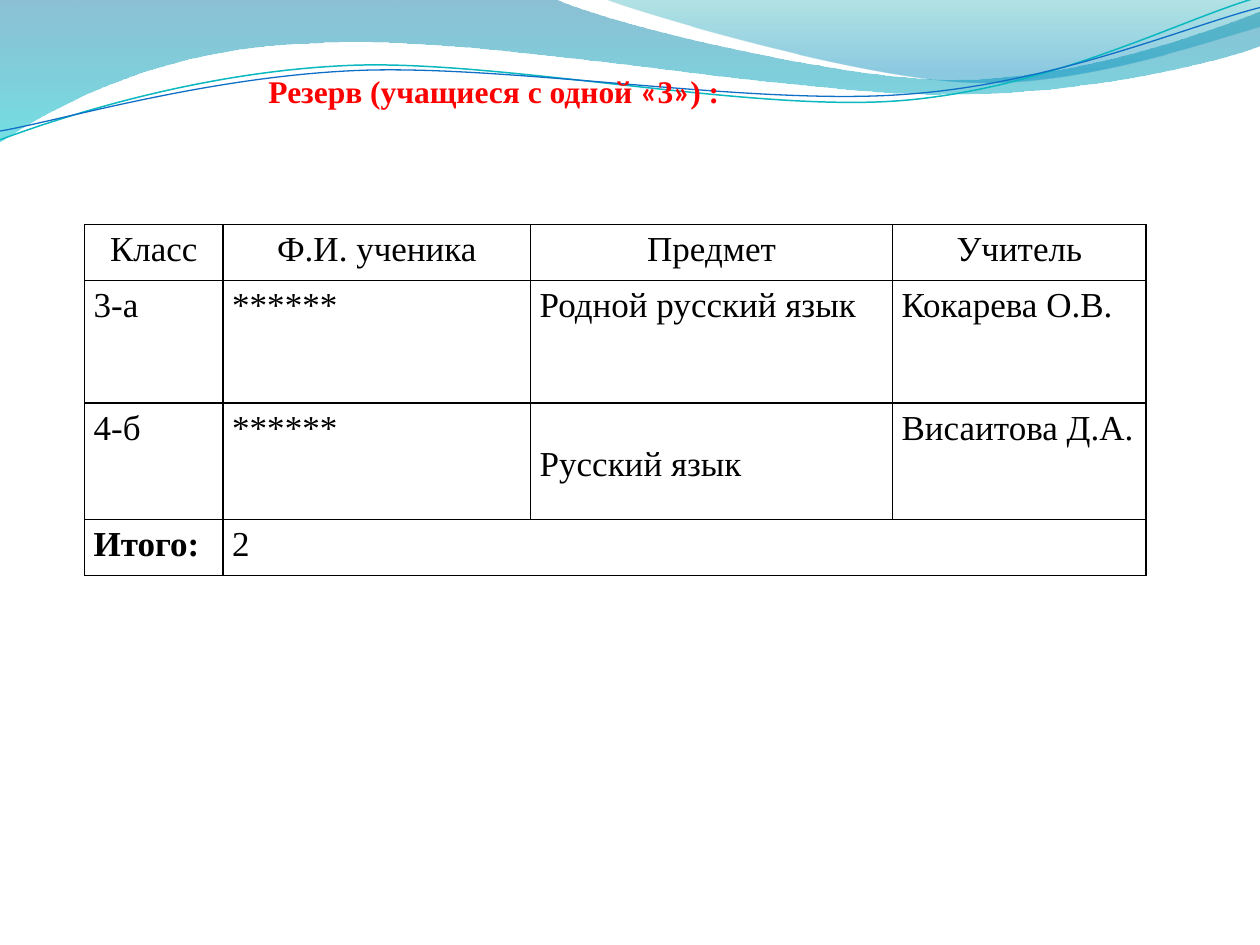
import math
from dataclasses import dataclass

from lxml import etree
from pptx import Presentation
from pptx.dml.color import RGBColor
from pptx.enum.text import MSO_ANCHOR, PP_ALIGN
from pptx.oxml.ns import qn
from pptx.util import Pt

CENTER, LEFT = PP_ALIGN.CENTER, PP_ALIGN.LEFT
MIDDLE, TOP = MSO_ANCHOR.MIDDLE, MSO_ANCHOR.TOP

Point = tuple[float, float]


@dataclass(frozen=True)
class Theme:
    title_color: str = "FF0000"
    text_color: str = "000000"
    border_color: str = "000000"
    title_size: float = 18
    table_size: float = 20
    border_width: float = 1
    font: str = "Times New Roman"
    quote_font: str = "Calibri"


@dataclass(frozen=True)
class Stop:
    position: float
    color: str
    opacity: int


@dataclass(frozen=True)
class Wave:
    """Box (left, top, width, height), start point, then segments of
    one point for a line or three for a Bézier curve."""
    box: tuple[float, float, float, float]
    start: Point
    segments: list[tuple[Point, ...]]
    stops: tuple[Stop, ...] = ()
    line_color: str = ""
    line_width: float = 0
    rotation: float = 0


THEME = Theme()

WAVES = [
    Wave((-0.7, -0.7, 721.4, 82.1), (0, 0), [
        ((316.8, -0.7),),
        ((342.7, 12.2), (478.1, 45.4), (545.8, 45.4)),
        ((614.2, 45.4), (689.8, 18.7), (720, 6.5)),
        ((720.7, 25.9),),
        ((707.8, 31.7), (626.4, 54.7), (537.1, 54)),
        ((447.8, 54), (275, 20.2), (185, 24.5)),
        ((92.9, 25.9), (33.1, 59.8), (-0.7, 81.4)),
        ((0, 0),),
    ], stops=(Stop(0, "0074A1", 45), Stop(1, "00C6CF", 55))),
    Wave((344.9, -0.7, 375.1, 50.4), (344.9, -0.7), [
        ((366.5, 7.9), (491, 44.6), (553.7, 46.8)),
        ((616.3, 49.7), (691.9, 23), (720, 15.1)),
        ((720, 0),),
        ((344.9, -0.7),),
    ], stops=(Stop(0, "00A1A9", 30), Stop(0.8, "008BBF", 45))),
    Wave((-1.4, 15.8, 721.4, 51.1), (0, 79.9), [
        ((34.6, 67), (113.8, 41), (199.4, 37.4)),
        ((284.4, 33.8), (427, 64.1), (513.4, 57.6)),
        ((599.8, 51.1), (675.4, 10.8), (718.6, -1.4)),
    ], line_color="0AB8BF", line_width=0.85, rotation=357.3),
    Wave((-1.4, 21.6, 722.2, 41.8), (0, 74.9), [
        ((33.8, 69.1), (118.1, 43.9), (203.8, 40.3)),
        ((290.2, 36.7), (429.8, 60.5), (516.2, 54)),
        ((601.9, 48.2), (677.5, 15.1), (720, 4.3)),
    ], line_color="0F6FC6", line_width=0.75, rotation=357.3),
]

TITLE_RUNS = [
    ("Резерв (учащиеся с одной ", THEME.font),
    ("«", THEME.quote_font),
    ("3", THEME.font),
    ("»", THEME.quote_font),
    (") : ", THEME.font),
]

COLUMN_WIDTHS = [79.2, 175.7, 206.8, 145]
ROW_HEIGHTS = [32, 70, 66.6, 32]
ROWS = [
    ["Класс", "Ф.И. ученика", "Предмет", "Учитель"],
    ["3-а", "******", "Родной русский язык", "Кокарева О.В."],
    ["4-б", "******", "Русский язык", "Висаитова Д.А."],
    ["Итого:", "2", "", ""],
]
CENTERED_CELL = (2, 2)
TOTAL_LABEL_CELL = (3, 0)


def to_box(wave: Wave, point: Point) -> Point:
    """Undo the rotation about the box centre and measure from the box corner."""
    left, top, width, height = wave.box
    x, y = point[0] - left - width / 2, point[1] - top - height / 2
    angle = math.radians(-wave.rotation)
    return (x * math.cos(angle) - y * math.sin(angle) + width / 2,
            x * math.sin(angle) + y * math.cos(angle) + height / 2)


def write_outline(outline, wave: Wave) -> None:
    """Fill the freeform's outline with true Bézier segments."""
    outline.clear()
    outline.set("w", str(Pt(wave.box[2])))
    outline.set("h", str(Pt(wave.box[3])))
    for index, points in enumerate([(wave.start,), *wave.segments]):
        tag = "moveTo" if index == 0 else "lnTo" if len(points) == 1 else "cubicBezTo"
        command = etree.SubElement(outline, qn(f"a:{tag}"))
        for point in points:
            x, y = to_box(wave, point)
            etree.SubElement(command, qn("a:pt"), x=str(Pt(x)), y=str(Pt(y)))
    if wave.stops:
        etree.SubElement(outline, qn("a:close"))


def draw_wave(slide, wave: Wave) -> None:
    builder = slide.shapes.build_freeform(*map(Pt, wave.start))
    builder.add_line_segments([tuple(map(Pt, segment[-1])) for segment in wave.segments],
                              close=False)
    shape = builder.convert_to_shape()
    for name, value in zip(("left", "top", "width", "height"), wave.box):
        setattr(shape, name, Pt(value))
    shape.rotation = wave.rotation
    write_outline(next(shape.element.iter(qn("a:path"))), wave)
    shape.shadow.inherit = False
    if not wave.stops:
        shape.fill.background()
        shape.line.color.rgb = RGBColor.from_string(wave.line_color)
        shape.line.width = Pt(wave.line_width)
        return
    shape.line.fill.background()
    shape.fill.gradient()
    shape.fill.gradient_angle = 270
    for gradient_stop, stop in zip(shape.fill.gradient_stops, wave.stops):
        gradient_stop.position = stop.position
        gradient_stop.color.rgb = RGBColor.from_string(stop.color)
    for color, stop in zip(shape.element.iter(qn("a:srgbClr")), wave.stops):
        etree.SubElement(color, qn("a:alpha"), val=str(stop.opacity * 1000))


def add_run(paragraph, text: str, font: str, size: float, color: str, bold: bool) -> None:
    run = paragraph.add_run()
    run.text = text
    for name, value in {"name": font, "size": Pt(size), "bold": bold}.items():
        setattr(run.font, name, value)
    run.font.color.rgb = RGBColor.from_string(color)


def draw_title(slide) -> None:
    box = slide.shapes.add_textbox(Pt(144.7), Pt(37.4), Pt(279.4), Pt(29))
    frame = box.text_frame
    frame.word_wrap = False
    frame.vertical_anchor = MIDDLE
    paragraph = frame.paragraphs[0]
    paragraph.alignment = CENTER
    for text, font in TITLE_RUNS:
        add_run(paragraph, text, font, THEME.title_size, THEME.title_color, True)


def add_borders(cell) -> None:
    properties = cell._tc.get_or_add_tcPr()
    for side in ("lnL", "lnR", "lnT", "lnB"):
        line = etree.SubElement(properties, qn(f"a:{side}"), w=str(Pt(THEME.border_width)))
        fill = etree.SubElement(line, qn("a:solidFill"))
        etree.SubElement(fill, qn("a:srgbClr"), val=THEME.border_color)


def format_cell(cell, row: int, column: int) -> None:
    cell_format = {
        "margin_left": Pt(5.2), "margin_right": Pt(5.2),
        "margin_top": Pt(0), "margin_bottom": Pt(0),
        "vertical_anchor": MIDDLE if (row, column) == CENTERED_CELL else TOP,
    }
    for name, value in cell_format.items():
        setattr(cell, name, value)
    add_borders(cell)
    cell.fill.background()
    text = ROWS[row][column]
    if text:
        paragraph = cell.text_frame.paragraphs[0]
        paragraph.alignment = CENTER if row == 0 else LEFT
        paragraph.line_spacing = 1.15
        add_run(paragraph, text, THEME.font, THEME.table_size, THEME.text_color,
                (row, column) == TOTAL_LABEL_CELL)


def draw_table(slide) -> None:
    table = slide.shapes.add_table(
        len(ROWS), len(COLUMN_WIDTHS), Pt(48.3), Pt(128.3),
        Pt(sum(COLUMN_WIDTHS)), Pt(sum(ROW_HEIGHTS))).table
    table.first_row = table.horz_banding = False
    for column, width in zip(table.columns, COLUMN_WIDTHS):
        column.width = Pt(width)
    for row, height in zip(table.rows, ROW_HEIGHTS):
        row.height = Pt(height)
    table.cell(3, 1).merge(table.cell(3, 3))
    for row in range(len(ROWS)):
        for column in range(len(COLUMN_WIDTHS)):
            format_cell(table.cell(row, column), row, column)


def main() -> None:
    presentation = Presentation()
    presentation.slide_width, presentation.slide_height = Pt(720), Pt(540)
    slide = presentation.slides.add_slide(presentation.slide_layouts[6])
    for wave in WAVES:
        draw_wave(slide, wave)
    draw_title(slide)
    draw_table(slide)
    presentation.save("out.pptx")


if __name__ == "__main__":
    main()
